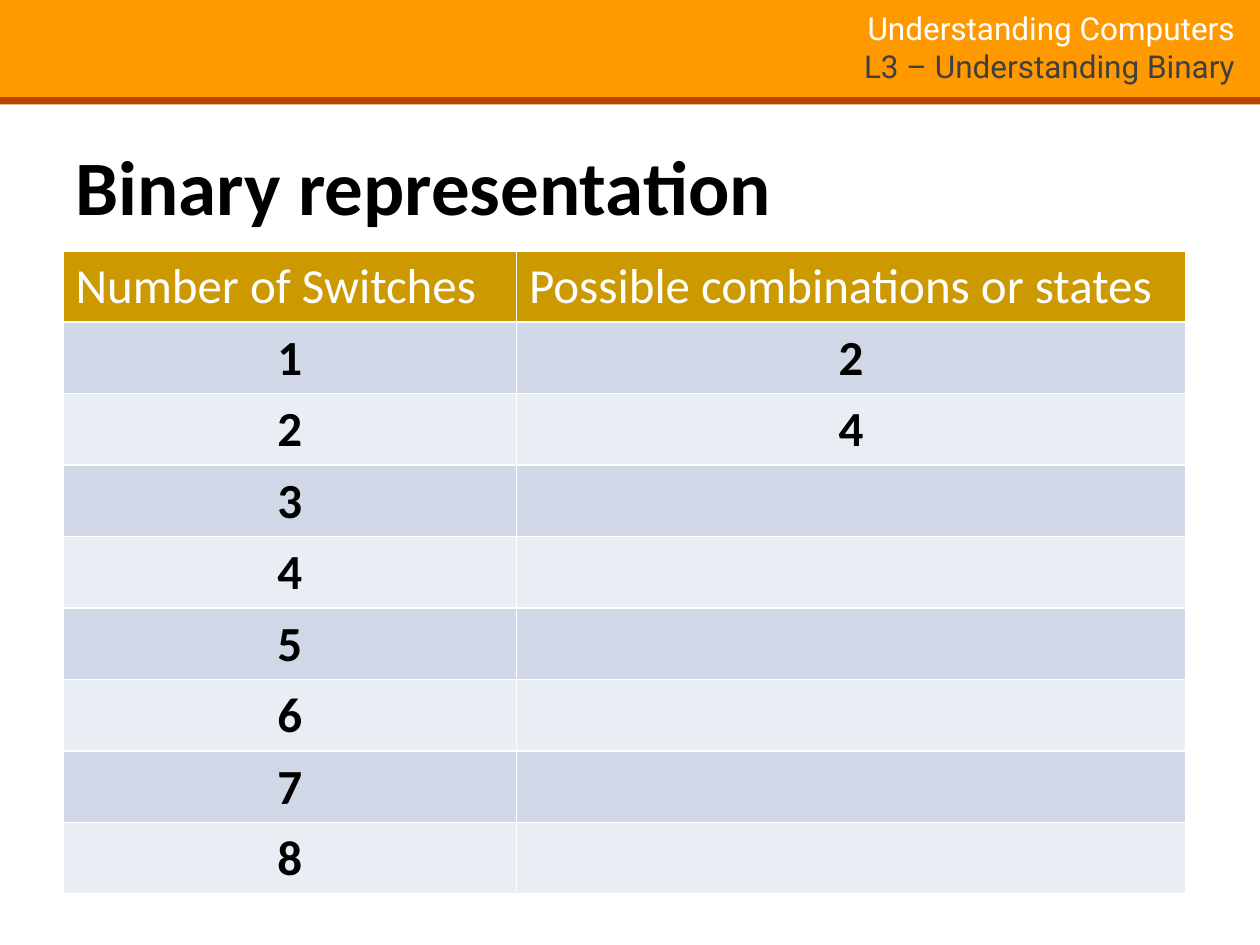
from lxml import etree
from pptx import Presentation
from pptx.dml.color import RGBColor
from pptx.enum.shapes import MSO_SHAPE
from pptx.enum.text import MSO_ANCHOR, PP_ALIGN
from pptx.oxml.ns import qn
from pptx.util import Inches, Pt

COLORS = {
    "orange": "FF9900", "rust": "BB4301", "gold": "CC9900",
    "band_dark": "D0D8E8", "band_light": "E9EDF4",
    "white": "FFFFFF", "black": "000000", "grey": "404040",
}
HEADERS = ["Number of Switches", "Possible combinations or states"]
STATES = {1: "2", 2: "4"}  # the remaining answers are left for the class
ROWS = [HEADERS] + [[str(n), STATES.get(n, "")] for n in range(1, 9)]


def rgb(name):
    return RGBColor.from_string(COLORS[name])


def add_run(p, text, size, font, color, bold=False):
    r = p.add_run()
    r.text = text
    r.font.size, r.font.name, r.font.bold = Pt(size), font, bold
    r.font.color.rgb = rgb(color)


def add_bar(slide, x, y, w, h, color):
    sp = slide.shapes.add_shape(MSO_SHAPE.RECTANGLE, x, y, w, h)
    sp.shadow.inherit = False
    sp.fill.solid()
    sp.fill.fore_color.rgb = rgb(color)
    sp.line.fill.background()


def add_text_box(slide, x, y, w, h, anchor):
    tf = slide.shapes.add_textbox(x, y, w, h).text_frame
    tf.word_wrap = True
    tf.vertical_anchor = anchor
    return tf.paragraphs[0]


def add_banner(slide, x, y, w, h):
    # Orange band with a thin rust rule beneath it
    rule = Inches(0.06)
    add_bar(slide, x, y + h - rule, w, rule, "rust")
    add_bar(slide, x, y, w, h - rule, "orange")
    # Course and lesson names
    p = add_text_box(slide, x + Inches(5.03), y + Inches(0.04),
                     Inches(4.91), Inches(0.69), MSO_ANCHOR.MIDDLE)
    p.alignment = PP_ALIGN.RIGHT
    add_run(p, "Understanding Computers", 18, "Roboto", "white")
    p.add_line_break()
    add_run(p, "L3 – Understanding Binary", 18, "Roboto", "grey")


def add_title(slide, x, y, w, h):
    p = add_text_box(slide, x, y, w, h, MSO_ANCHOR.TOP)
    add_run(p, "Binary representation", 44, "Calibri", "black", bold=True)


def set_borders(cell, color, width):
    tc_pr = cell._tc.get_or_add_tcPr()
    for i, side in enumerate(("lnL", "lnR", "lnT", "lnB")):
        ln = etree.Element(qn(f"a:{side}"), w=str(Pt(width)))
        fill = etree.SubElement(ln, qn("a:solidFill"))
        etree.SubElement(fill, qn("a:srgbClr"), val=COLORS[color])
        tc_pr.insert(i, ln)


def add_switch_table(slide, x, y, w, h):
    table = slide.shapes.add_table(len(ROWS), len(HEADERS), x, y, w, h).table
    table.columns[0].width = Inches(3.6)
    table.columns[1].width = w - Inches(3.6)
    for i, values in enumerate(ROWS):
        is_header = i == 0
        fill = "gold" if is_header else "band_dark" if i % 2 else "band_light"
        for cell, text in zip(table.rows[i].cells, values):
            cell.fill.solid()
            cell.fill.fore_color.rgb = rgb(fill)
            set_borders(cell, "white", 1)
            p = cell.text_frame.paragraphs[0]
            p.alignment = PP_ALIGN.LEFT if is_header else PP_ALIGN.CENTER
            if text:
                add_run(p, text, 28, "Calibri",
                        "white" if is_header else "black", not is_header)
            else:
                p.font.size = Pt(28)


def main():
    prs = Presentation()
    prs.slide_width, prs.slide_height = Inches(10), Inches(7.5)
    slide = prs.slides.add_slide(prs.slide_layouts[6])
    add_banner(slide, Inches(-0.04), Inches(-0.01), Inches(10.06), Inches(0.84))
    add_title(slide, Inches(0.5), Inches(1.05), Inches(9), Inches(1.25))
    add_switch_table(slide, Inches(0.5), Inches(1.99), Inches(8.91), Inches(5.1))
    prs.save("out.pptx")


if __name__ == "__main__":
    main()
